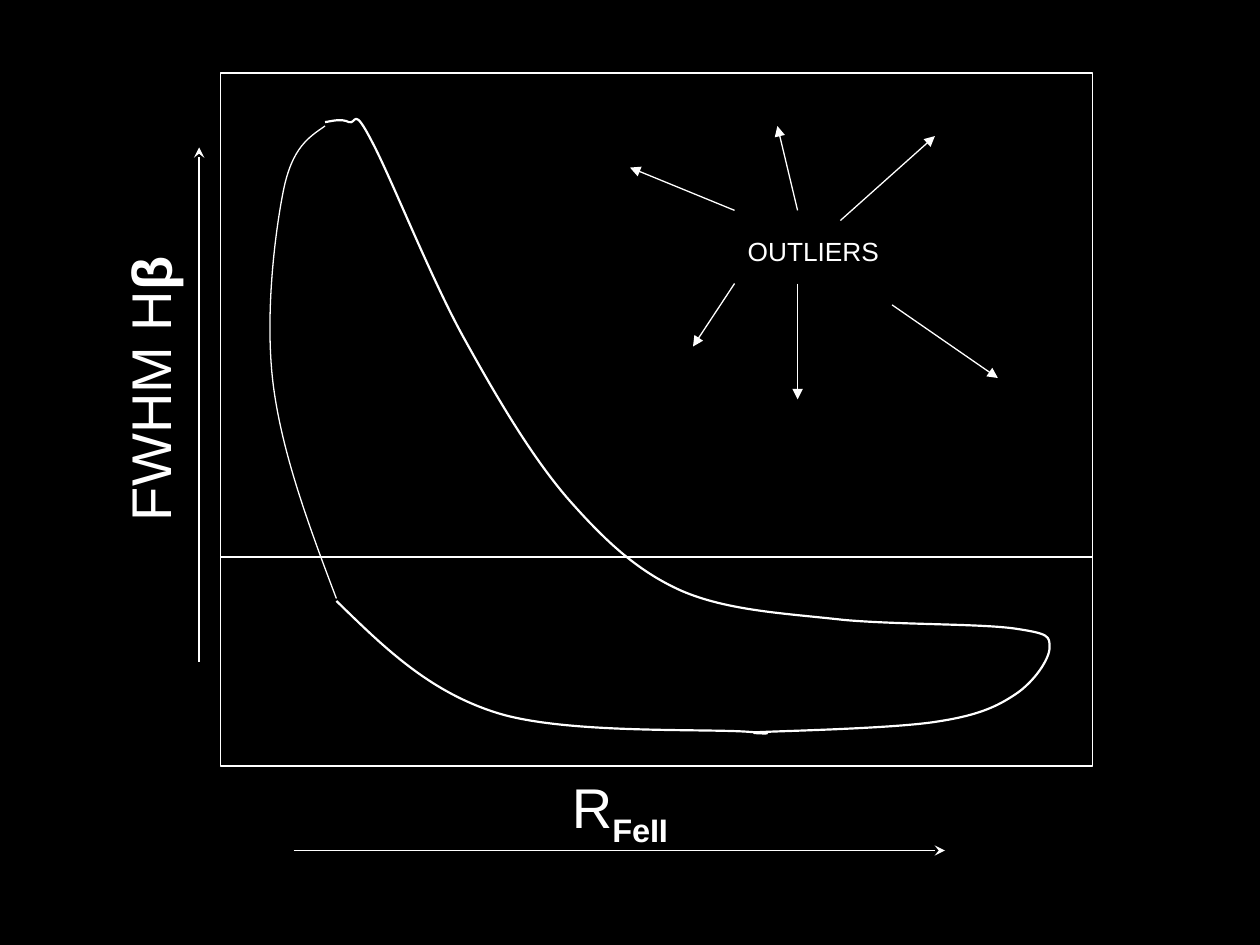
from dataclasses import dataclass

from lxml.etree import SubElement
from pptx import Presentation
from pptx.dml.color import RGBColor
from pptx.enum.shapes import MSO_CONNECTOR, MSO_SHAPE
from pptx.enum.text import MSO_ANCHOR, PP_ALIGN
from pptx.oxml.ns import qn
from pptx.util import Emu, Pt

PX = 9144
WHITE = "FFFFFF"
BLACK = "000000"

Point = tuple[int, int]


@dataclass(frozen=True)
class Line:
    start: Point
    end: Point
    head: str = ""
    width: float = 0.75


@dataclass(frozen=True)
class Run:
    text: str
    bold: bool = False
    baseline: int = 0


@dataclass(frozen=True)
class Label:
    x: int
    y: int
    w: int
    h: int
    size: int
    runs: tuple[Run, ...]
    rotation: int = 0


@dataclass(frozen=True)
class Curve:
    start: Point
    controls: tuple[Point, ...]
    width: float


LINES = (
    Line((158, 525), (158, 117), "stealth", 1),
    Line((233, 675), (750, 675), "stealth", 1),
    Line((583, 225), (550, 275), "triangle"),
    Line((633, 225), (633, 317), "triangle"),
    Line((667, 175), (742, 108), "triangle"),
    Line((708, 242), (792, 300), "triangle"),
    Line((583, 167), (500, 133), "triangle"),
    Line((633, 167), (617, 100), "triangle"),
    Line((175, 442), (867, 442)),
)

LABELS = (
    Label(392, 608, 200, 63, 32, (Run("R"), Run("FeII", True, -25000))),
    Label(-98, 277, 433, 63, 32, (Run("FWHM H"), Run("β", True)), 270),
    Label(508, 182, 275, 35, 15, (Run("OUTLIERS"),)),
)

CURVES = (
    Curve((267, 475), (
        (245, 417), (224, 360), (217, 306),
        (210, 252), (218, 186), (225, 151),
        (232, 117), (245, 109), (258, 100),
    ), 0.75),
    Curve((258, 97), (
        (264, 96), (271, 94), (277, 97),
        (283, 99), (280, 83), (295, 112),
        (310, 140), (342, 221), (368, 268),
        (394, 315), (421, 361), (450, 395),
        (479, 428), (505, 453), (541, 469),
        (578, 485), (625, 487), (669, 492),
        (713, 496), (779, 495), (806, 499),
        (833, 503), (833, 505), (833, 514),
        (833, 523), (821, 541), (806, 551),
        (791, 561), (776, 568), (742, 573),
        (709, 578), (629, 580), (605, 581),
        (581, 582), (631, 583), (596, 581),
        (561, 578), (450, 583), (395, 566),
        (340, 549), (304, 513), (267, 477),
    ), 1.25),
)


def px(n: int) -> Emu:
    return Emu(n * PX)


def paint(fmt, color: str) -> None:
    fmt.solid()
    fmt.fore_color.rgb = RGBColor.from_string(color)


def outline(sp, width: float) -> None:
    sp.shadow.inherit = False
    sp.fill.background()
    paint(sp.line.fill, WHITE)
    sp.line.width = Pt(width)


def add_frame(s, x: int, y: int, w: int, h: int) -> None:
    sp = s.shapes.add_shape(MSO_SHAPE.RECTANGLE, px(x), px(y), px(w), px(h))
    outline(sp, 0.75)


def add_line(s, line: Line) -> None:
    ends = [px(n) for n in line.start + line.end]
    cx = s.shapes.add_connector(MSO_CONNECTOR.STRAIGHT, *ends)
    paint(cx.line.fill, WHITE)
    cx.line.width = Pt(line.width)
    if line.head:
        SubElement(cx.line._get_or_add_ln(), qn("a:tailEnd"), type=line.head)
    SubElement(cx._element.spPr, qn("a:effectLst"))


def add_curve(s, curve: Curve) -> None:
    builder = s.shapes.build_freeform(*curve.start, scale=PX)
    builder.add_line_segments(curve.controls, close=False)
    sp = builder.convert_to_shape()
    outline(sp, curve.width)
    segments = list(sp._element.iter(qn("a:lnTo")))
    outline_el = segments[0].getparent()
    for i in range(0, len(segments), 3):
        bezier = SubElement(outline_el, qn("a:cubicBezTo"))
        for segment in segments[i:i + 3]:
            bezier.append(segment[0])
            outline_el.remove(segment)


def add_label(s, label: Label) -> None:
    sp = s.shapes.add_textbox(px(label.x), px(label.y), px(label.w), px(label.h))
    sp.rotation = label.rotation
    tf = sp.text_frame
    tf.word_wrap = True
    tf.vertical_anchor = MSO_ANCHOR.TOP
    p = tf.paragraphs[0]
    p.alignment = PP_ALIGN.CENTER
    p.font.name = "Arial"
    p.font.size = Pt(label.size)
    paint(p.font.fill, WHITE)
    for run in label.runs:
        r = p.add_run()
        r.text = run.text
        if run.bold:
            r.font.bold = True
        if run.baseline:
            r._r.get_or_add_rPr().set("baseline", str(run.baseline))


def main() -> None:
    prs = Presentation()
    prs.slide_width, prs.slide_height = px(1000), px(750)
    s = prs.slides.add_slide(prs.slide_layouts[6])
    paint(s.background.fill, BLACK)
    add_frame(s, 175, 58, 692, 550)
    for curve in CURVES:
        add_curve(s, curve)
    for label in LABELS:
        add_label(s, label)
    for line in LINES:
        add_line(s, line)
    prs.save("out.pptx")


if __name__ == "__main__":
    main()
